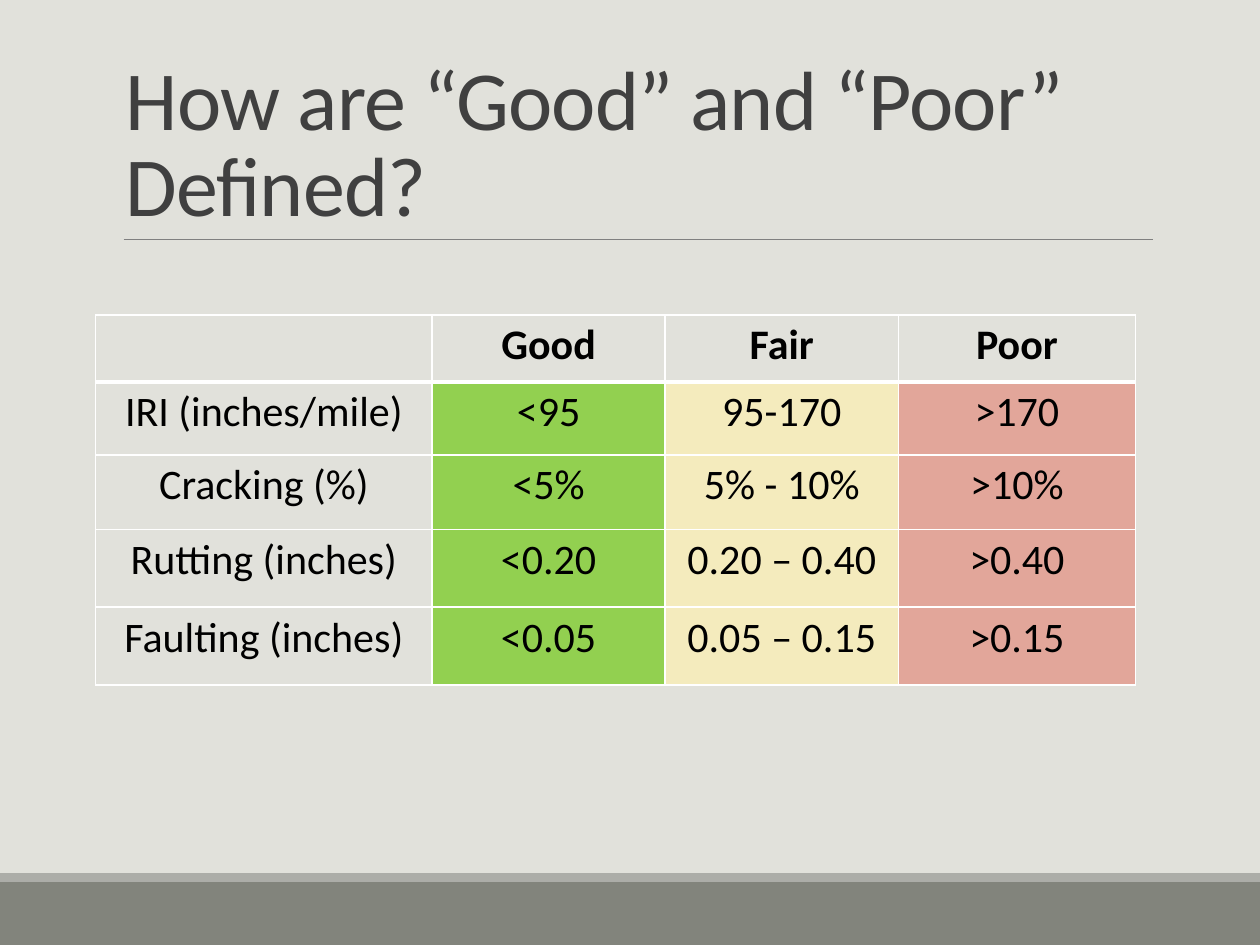
from lxml.etree import SubElement
from pptx import Presentation
from pptx.dml.color import RGBColor
from pptx.enum.shapes import MSO_CONNECTOR, MSO_SHAPE
from pptx.enum.text import MSO_ANCHOR, PP_ALIGN
from pptx.oxml import parse_xml
from pptx.oxml.ns import nsdecls, qn
from pptx.util import Cm, Pt

COLUMN_WIDTHS = [6.78, 4.7, 4.7, 4.78]
ROW_HEIGHTS = [1.35, 1.47, 1.5, 1.57, 1.57]
COLUMN_FILLS = [None, "92D050", "F4EBBD", "E2A69A"]
RATINGS = [
    ["", "Good", "Fair", "Poor"],
    ["IRI (inches/mile)", "<95", "95-170", ">170"],
    ["Cracking (%)", "<5%", "5% - 10%", ">10%"],
    ["Rutting (inches)", "<0.20", "0.20 – 0.40", ">0.40"],
    ["Faulting (inches)", "<0.05", "0.05 – 0.15", ">0.15"],
]


def color(value):
    """Turn a hex string into a colour."""
    return RGBColor.from_string(value)


def write(frame, text, size=24, fill="000000", bold=False,
          align=PP_ALIGN.LEFT, line_spacing=None, tracking=None):
    """Write one formatted paragraph into a text frame."""
    para = frame.paragraphs[0]
    para.alignment = align
    para.line_spacing = line_spacing
    span = para.add_run()
    span.text = text
    span.font.name = "Calibri"
    span.font.size = Pt(size)
    span.font.bold = bold
    span.font.color.rgb = color(fill)
    if tracking is not None:
        span.font._element.set("spc", str(int(tracking * 100)))


def add_bar(page, left, top, width, height, fill):
    """Draw a plain filled rectangle."""
    bar = page.shapes.add_shape(
        MSO_SHAPE.RECTANGLE, Cm(left), Cm(top), Cm(width), Cm(height))
    bar.shadow.inherit = False
    bar.fill.solid()
    bar.fill.fore_color.rgb = color(fill)
    bar.line.fill.background()


def add_footer(page, left, top, width, height):
    """Draw the dark footer band with its thin lighter stripe on top."""
    stripe = 0.18
    add_bar(page, left, top + stripe, width, height - stripe, "82847C")
    add_bar(page, left, top, width, stripe, "ACADA8")


def add_title(page, left, top, width, height, text):
    """Place the title at the bottom of its box, above a thin rule."""
    bottom = top + height
    rule = page.shapes.add_connector(
        MSO_CONNECTOR.STRAIGHT,
        Cm(left + 0.2), Cm(bottom), Cm(left + width), Cm(bottom))
    rule.line.color.rgb = color("808080")
    rule.line.width = Pt(0.5)
    SubElement(rule._element.spPr, qn("a:effectLst"))
    box = page.shapes.add_textbox(Cm(left), Cm(top), Cm(width), Cm(height))
    frame = box.text_frame
    frame.word_wrap = True
    frame.vertical_anchor = MSO_ANCHOR.BOTTOM
    write(frame, text, size=48, fill="404040", line_spacing=0.85, tracking=-0.5)


def set_borders(cell, **widths):
    """Give a cell white borders, with widths in points by side."""
    properties = cell._tc.get_or_add_tcPr()
    for index, (side, width) in enumerate(widths.items()):
        properties.insert(index, parse_xml(
            f'<a:ln{side} {nsdecls("a")} w="{Pt(width)}"><a:solidFill>'
            f'<a:srgbClr val="FFFFFF"/></a:solidFill></a:ln{side}>'))


def add_ratings(page, left, top):
    """Build the table of condition limits, one coloured column per rating."""
    table = page.shapes.add_table(
        len(ROW_HEIGHTS), len(COLUMN_WIDTHS), Cm(left), Cm(top),
        Cm(sum(COLUMN_WIDTHS)), Cm(sum(ROW_HEIGHTS))).table
    table.horz_banding = False
    for column, width in zip(table.columns, COLUMN_WIDTHS):
        column.width = Cm(width)
    for number, (row, height) in enumerate(zip(table.rows, ROW_HEIGHTS)):
        row.height = Cm(height)
        header = number == 0
        for cell, text, fill in zip(row.cells, RATINGS[number], COLUMN_FILLS):
            cell.margin_left = cell.margin_right = Cm(0.18)
            cell.margin_top = cell.margin_bottom = Cm(0.1)
            if fill and not header:
                cell.fill.solid()
                cell.fill.fore_color.rgb = color(fill)
            else:
                cell.fill.background()
            set_borders(cell, L=1, R=1, T=3 if number == 1 else 1,
                        B=3 if header else 1)
            if text:
                write(cell.text_frame, text, bold=header, align=PP_ALIGN.CENTER)


def main():
    """Build the slide and save it."""
    deck = Presentation()
    deck.slide_width, deck.slide_height = Cm(25.4), Cm(19.05)
    page = deck.slides.add_slide(deck.slide_layouts[6])
    page.background.fill.solid()
    page.background.fill.fore_color.rgb = color("E1E1DB")
    add_footer(page, 0, 17.6, 25.4, 1.45)
    add_title(page, 2.29, 0.79, 20.95, 4.04, "How are “Good” and “Poor” Defined?")
    add_ratings(page, 1.93, 6.35)
    deck.save("out.pptx")


if __name__ == "__main__":
    main()
